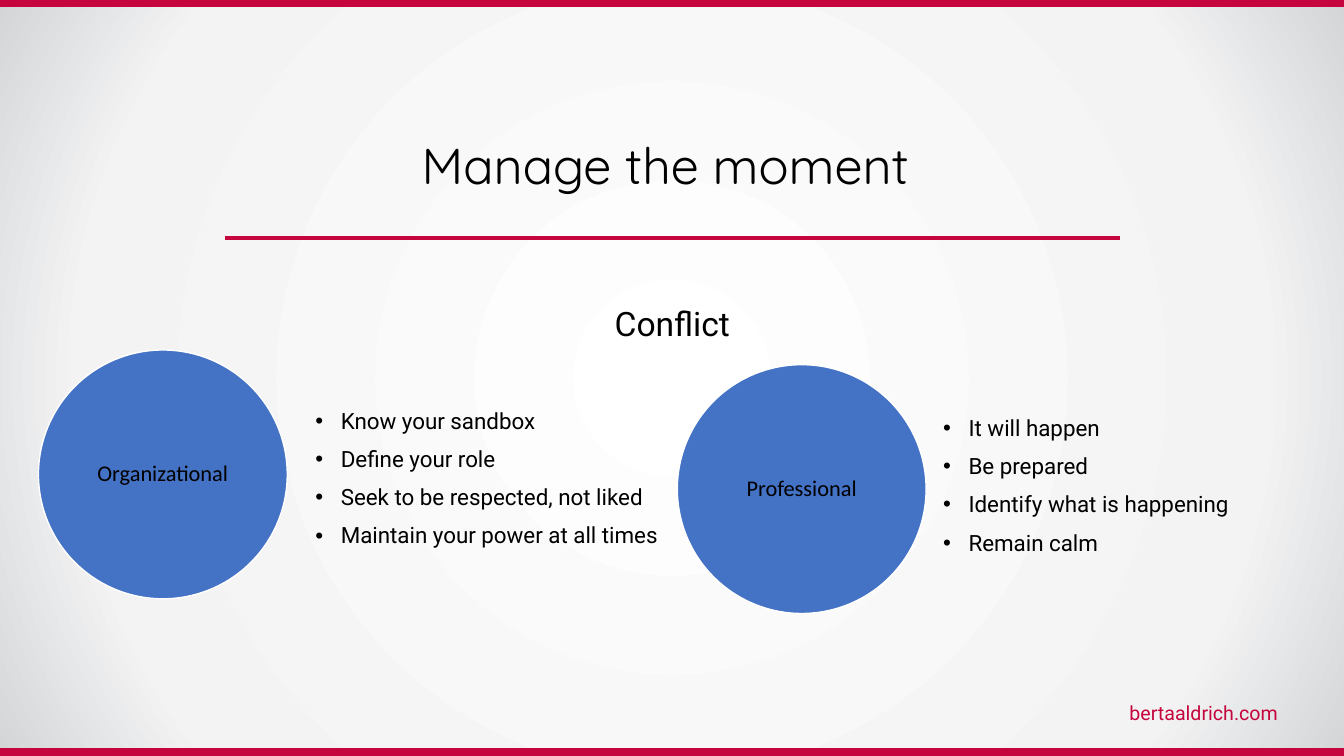
from dataclasses import dataclass

from lxml.etree import SubElement
from pptx import Presentation
from pptx.dml.color import RGBColor
from pptx.enum.shapes import MSO_CONNECTOR, MSO_SHAPE
from pptx.enum.text import MSO_ANCHOR, PP_ALIGN
from pptx.oxml import parse_xml
from pptx.oxml.ns import nsdecls, qn
from pptx.util import Cm, Pt


@dataclass(frozen=True)
class Theme:
    crimson: RGBColor = RGBColor(0xC5, 0x05, 0x3D)
    blue: RGBColor = RGBColor(0x44, 0x72, 0xC4)
    white: RGBColor = RGBColor(0xFF, 0xFF, 0xFF)
    black: RGBColor = RGBColor(0, 0, 0)
    backdrop: tuple = ((0, "FFFFFF"), (77, "F3F3F4"), (100, "D3D5D7"))
    title_font: str = "Quicksand"
    body_font: str = "Roboto"
    label_font: str = "Calibri"
    title_size: Pt = Pt(36)
    subtitle_size: Pt = Pt(24)
    body_size: Pt = Pt(16)
    footer_size: Pt = Pt(14)


THEME = Theme()
SLIDE_WIDTH, SLIDE_HEIGHT = Cm(33.87), Cm(19.05)
BULLET_INDENT = Cm(0.64)


def set_radial_background(slide):
    slide.background.fill.solid()
    properties = slide.element.find(".//" + qn("p:bgPr"))
    stops = "".join(
        f'<a:gs pos="{position * 1000}"><a:srgbClr val="{color}"/></a:gs>'
        for position, color in THEME.backdrop
    )
    gradient = parse_xml(
        f'<a:gradFill {nsdecls("a")} rotWithShape="1"><a:gsLst>{stops}</a:gsLst>'
        '<a:path path="circle"><a:fillToRect l="50000" t="50000" r="50000" b="50000"/>'
        "</a:path></a:gradFill>"
    )
    properties.replace(properties.find(qn("a:solidFill")), gradient)


def add_filled_shape(shapes, kind, left, top, width, height, fill, line):
    shape = shapes.add_shape(kind, left, top, width, height)
    shape.shadow.inherit = False
    shape.fill.solid()
    shape.fill.fore_color.rgb = fill
    shape.line.color.rgb = line
    shape.line.width = Pt(1)


def add_bullet(paragraph):
    properties = paragraph._p.get_or_add_pPr()
    properties.set("marL", str(BULLET_INDENT))
    properties.set("indent", str(-BULLET_INDENT))
    SubElement(properties, qn("a:buFont"), typeface="Arial")
    SubElement(properties, qn("a:buChar"), char="•")


def add_text(shapes, lines, left, top, width, height, font, size,
             color=THEME.black, align=PP_ALIGN.CENTER, bulleted=False):
    text_frame = shapes.add_textbox(left, top, width, height).text_frame
    text_frame.word_wrap = True
    for index, line in enumerate(lines):
        paragraph = text_frame.add_paragraph() if index else text_frame.paragraphs[0]
        paragraph.alignment = align
        paragraph.line_spacing = 0.9
        if index:
            paragraph.space_before = Pt(10)
        if bulleted:
            add_bullet(paragraph)
        run = paragraph.add_run()
        run.text = line
        run.font.name = font
        run.font.size = size
        run.font.color.rgb = color
    return text_frame


def add_title_rule(slide, left, right, top):
    rule = slide.shapes.add_connector(MSO_CONNECTOR.STRAIGHT, left, top, right, top)
    rule.line.color.rgb = THEME.crimson
    rule.line.width = Pt(3)
    SubElement(rule._element.spPr, qn("a:effectLst"))


def add_labelled_circle(slide, label, left, top):
    diameter, inset = Cm(6.27), Cm(0.92)
    shapes = slide.shapes.add_group_shape().shapes
    add_filled_shape(shapes, MSO_SHAPE.OVAL, left, top, diameter, diameter,
                     THEME.blue, THEME.white)
    side = diameter - 2 * inset
    text_frame = add_text(shapes, [label], left + inset, top + inset, side, side,
                          THEME.label_font, THEME.body_size)
    text_frame.vertical_anchor = MSO_ANCHOR.MIDDLE
    text_frame.margin_left = text_frame.margin_right = Cm(0.36)


def add_bullet_list(slide, lines, left, top):
    add_text(slide.shapes, lines, left, top, Cm(18.36), Cm(3.18), THEME.body_font,
             THEME.body_size, align=PP_ALIGN.LEFT, bulleted=True)


def main():
    presentation = Presentation()
    presentation.slide_width, presentation.slide_height = SLIDE_WIDTH, SLIDE_HEIGHT
    slide = presentation.slides.add_slide(presentation.slide_layouts[6])
    set_radial_background(slide)

    for bar_top in (Cm(18.87), Cm(-0.02)):
        add_filled_shape(slide.shapes, MSO_SHAPE.RECTANGLE, 0, bar_top, SLIDE_WIDTH,
                         Cm(0.18), THEME.crimson, THEME.crimson)
    add_text(slide.shapes, ["bertaaldrich.com"], Cm(24.13), Cm(17.6), Cm(8.33), Cm(0.86),
             THEME.body_font, THEME.footer_size, THEME.crimson, PP_ALIGN.RIGHT)

    add_text(slide.shapes, ["Manage the moment "], Cm(5.66), Cm(3.43), Cm(22.56), Cm(1.5),
             THEME.title_font, THEME.title_size)
    add_text(slide.shapes, ["Conflict"], Cm(2.34), Cm(7.62), Cm(29.21), Cm(7.95),
             THEME.body_font, THEME.subtitle_size)
    add_title_rule(slide, Cm(5.66), Cm(28.22), Cm(5.99))

    add_labelled_circle(slide, "Organizational", Cm(0.97), Cm(8.82))
    add_bullet_list(slide, [
        "Know your sandbox",
        "Define your role",
        "Seek to be respected, not liked",
        "Maintain your power at all times",
    ], Cm(7.7), Cm(10.21))
    add_labelled_circle(slide, "Professional", Cm(17.07), Cm(9.19))
    add_bullet_list(slide, [
        "It will happen",
        "Be prepared",
        "Identify what is happening",
        "Remain calm",
    ], Cm(23.52), Cm(10.39))

    presentation.save("out.pptx")


if __name__ == "__main__":
    main()
